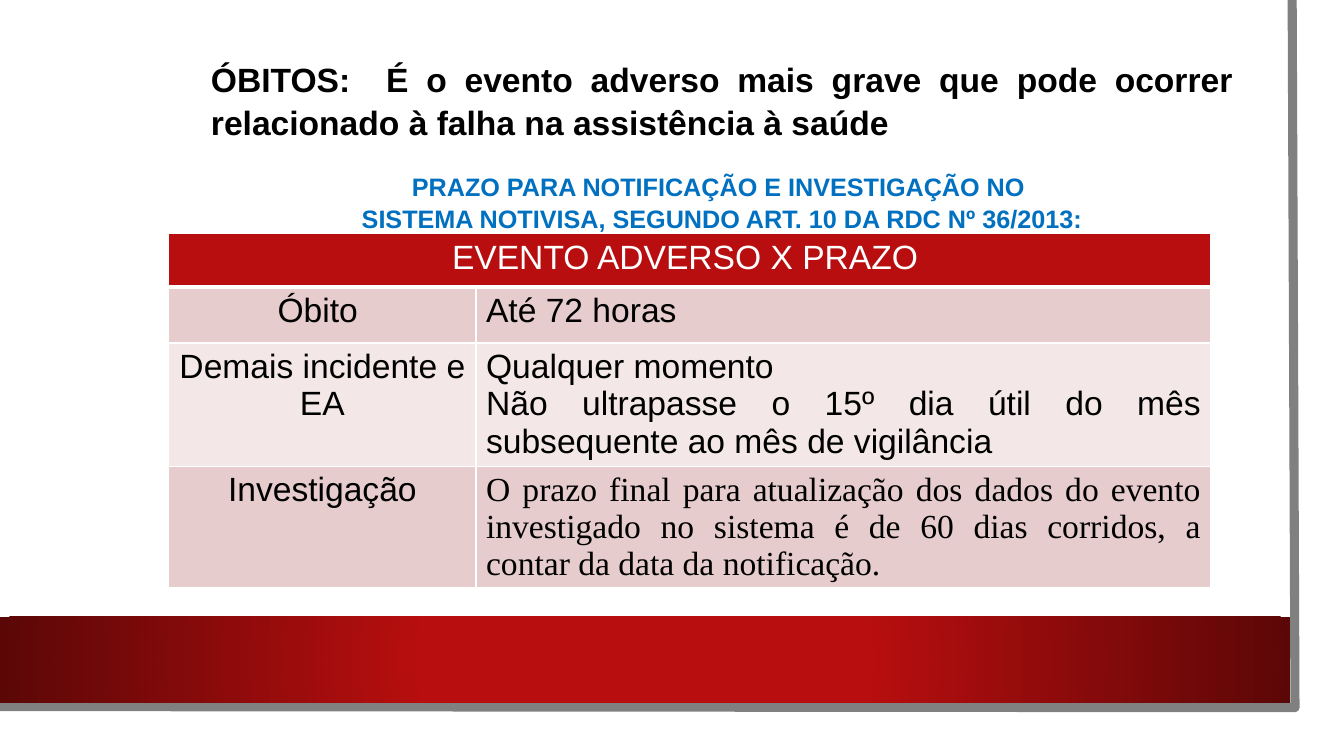
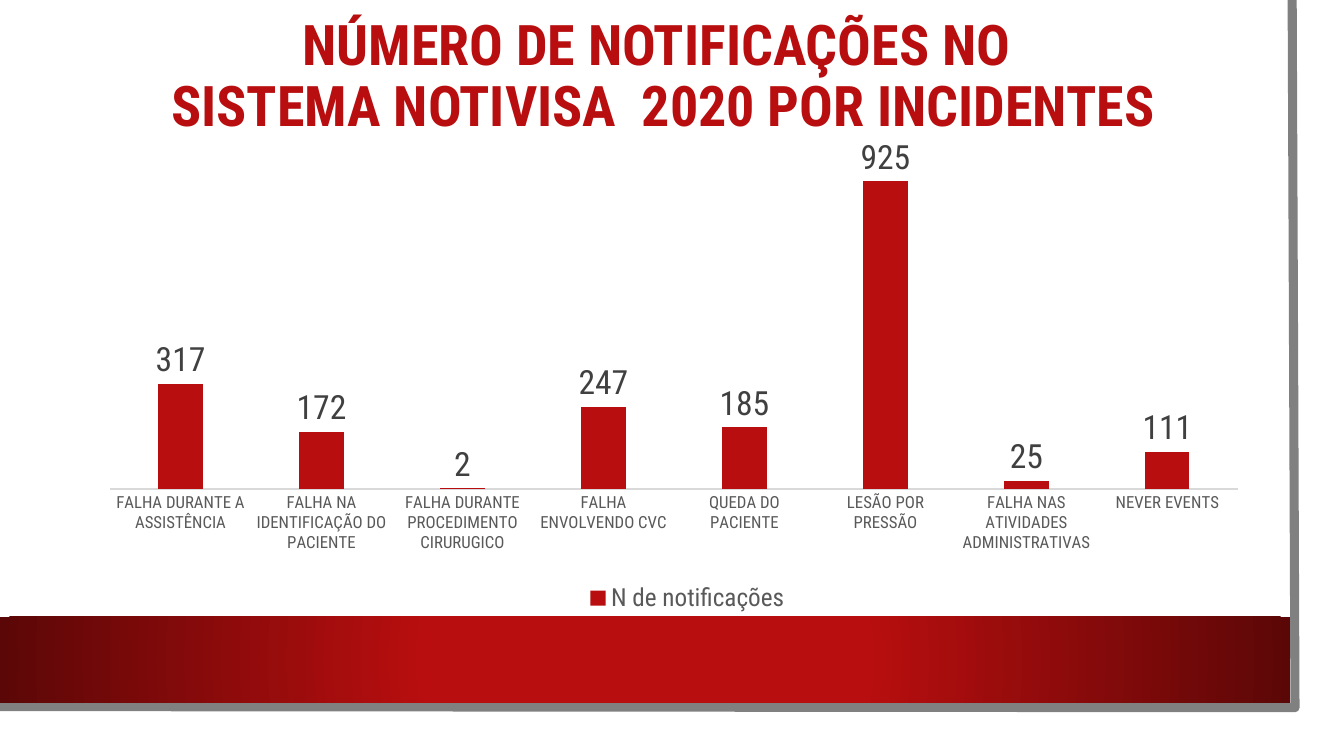
from dataclasses import dataclass

from pptx import Presentation
from pptx.chart.data import CategoryChartData
from pptx.dml.color import RGBColor
from pptx.enum.chart import XL_CHART_TYPE as ChartType
from pptx.enum.chart import XL_LABEL_POSITION as LabelPosition
from pptx.enum.chart import XL_LEGEND_POSITION as LegendPosition
from pptx.enum.chart import XL_TICK_MARK as TickMark
from pptx.enum.shapes import MSO_SHAPE as Preset
from pptx.enum.text import MSO_ANCHOR as Anchor
from pptx.enum.text import MSO_AUTO_SIZE as AutoSize
from pptx.enum.text import PP_ALIGN as Align
from pptx.oxml import parse_xml
from pptx.oxml.ns import nsdecls
from pptx.util import Pt

COLORS = {
    "white": "FFFFFF", "black": "000000", "red": "B80E0F", "dark red": "5C0707",
    "frame": "808080", "blue": "0070C0", "rose": "E6CCCC", "pale rose": "F3E7E7",
    "label": "404040", "axis text": "595959", "axis line": "D9D9D9",
}
SANS, SERIF, CONDENSED = "Arial", "Times New Roman", "Roboto Condensed"
TITLE_LAYOUT, BODY_LAYOUT = 5, 1


@dataclass(frozen=True)
class Style:
    size: float
    color: str = "black"
    name: str = SANS
    bold: bool = False


@dataclass(frozen=True)
class Line:
    text: str
    style: Style
    align: Align = Align.CENTER
    before: float = 0
    spacing: float = 1.0


@dataclass(frozen=True)
class TableRow:
    height: float
    fill: str
    cells: tuple[tuple[Line, ...], ...]


def rgb(color: str) -> RGBColor:
    return RGBColor.from_string(COLORS[color])


def apply_style(font, style: Style) -> None:
    font.name, font.size, font.bold = style.name, Pt(style.size), style.bold
    font.color.rgb = rgb(style.color)


def write_lines(frame, lines: tuple[Line, ...], plain: bool = False) -> None:
    """Write one paragraph per line; plain removes the inherited bullet."""
    for index, line in enumerate(lines):
        para = frame.paragraphs[0] if index == 0 else frame.add_paragraph()
        if plain:
            properties = para._p.get_or_add_pPr()
            properties.set("marL", "0")
            properties.set("indent", "0")
            properties.append(parse_xml(f"<a:buNone {nsdecls('a')}/>"))
        para.alignment = line.align
        para.space_before = Pt(line.before)
        para.line_spacing = line.spacing
        for part_index, part in enumerate(line.text.split("\n")):
            if part_index:
                para.add_line_break()
            span = para.add_run()
            span.text = part
            apply_style(span.font, line.style)


def place(box, left: float, top: float, width: float, height: float) -> None:
    box.left, box.top, box.width, box.height = Pt(left), Pt(top), Pt(width), Pt(height)


def prepare_frame(box, anchor: Anchor):
    frame = box.text_frame
    frame.word_wrap = True
    frame.auto_size = AutoSize.NONE
    frame.vertical_anchor = anchor
    return frame


# Shared frame and band, kept on the slide master
def add_master_frame(deck, page) -> None:
    sheet = page.shapes.add_shape(Preset.RECTANGLE, 0, 0, Pt(943), Pt(523.5))
    sheet.fill.solid()
    sheet.fill.fore_color.rgb = rgb("white")
    sheet.line.fill.background()

    builder = page.shapes.build_freeform(Pt(923), 0)
    builder.add_line_segments([(Pt(925), Pt(505.5)), (Pt(-2), Pt(504.7))], close=False)
    edge = builder.convert_to_shape()
    edge.fill.background()
    edge.line.color.rgb = rgb("frame")
    edge.line.width = Pt(6.5)

    band = page.shapes.add_shape(Preset.RECTANGLE, 0, Pt(440.7), Pt(921.5), Pt(61.3))
    band.line.fill.background()
    band.fill.gradient()
    stops = ((0.34, "red"), (1.0, "dark red"))
    for stop, (position, color) in zip(band.fill.gradient_stops, stops):
        stop.position = position
        stop.color.rgb = rgb(color)
    linear = band.element.xpath("./p:spPr/a:gradFill/a:lin")[0]
    linear.getparent().replace(linear, parse_xml(
        f'<a:path {nsdecls("a")} path="circle">'
        '<a:fillToRect l="50000" t="50000" r="50000" b="50000"/></a:path>'))

    tree = deck.slide_master.shapes.element
    for index, shape in enumerate((sheet, edge, band)):
        shape.shadow.inherit = False
        shape.element.xpath("./p:nvSpPr/p:cNvPr")[0].set("id", str(100 + index))
        tree.insert(2 + index, shape.element)


# Deadline slide
CELL = Style(24)
HEADING = Style(24, bold=True)
NOTICE = Style(18, "blue", bold=True)
DEADLINE_TEXT = (
    Line("ÓBITOS:  É o evento adverso mais grave que pode ocorrer relacionado à "
         "falha na assistência à saúde", HEADING, Align.JUSTIFY, spacing=1.07),
    Line("PRAZO PARA NOTIFICAÇÃO E INVESTIGAÇÃO NO ", NOTICE, before=19, spacing=1.07),
    Line("SISTEMA NOTIVISA, SEGUNDO ART. 10 DA RDC Nº 36/2013:", NOTICE, spacing=1.07),
)
COLUMN_WIDTHS = (219.5, 525)
DEADLINE_ROWS = (
    TableRow(38, "red", ((Line("EVENTO ADVERSO X PRAZO ", Style(24, "white")),),)),
    TableRow(40, "rose", (
        (Line("Óbito ", CELL),),
        (Line("Até 72 horas ", CELL, Align.JUSTIFY),))),
    TableRow(88, "pale rose", (
        (Line("Demais incidente e EA", CELL),),
        (Line("Qualquer momento", CELL, Align.JUSTIFY),
         Line("Não ultrapasse o 15º dia útil do mês subsequente ao mês de vigilância",
              CELL, Align.JUSTIFY)))),
    TableRow(86.5, "rose", (
        (Line("Investigação", CELL),),
        (Line("O prazo final para atualização dos dados do evento investigado no "
              "sistema é de 60 dias corridos, a contar da data da notificação.",
              Style(24, name=SERIF), Align.JUSTIFY),))),
)


def add_borders(cell, header: bool) -> None:
    properties = cell._tc.get_or_add_tcPr()
    for index, side in enumerate(("lnL", "lnR", "lnT", "lnB")):
        width = Pt(3 if header and side == "lnB" else 1)
        properties.insert(index, parse_xml(
            f'<a:{side} {nsdecls("a")} w="{width}"><a:solidFill>'
            f'<a:srgbClr val="{COLORS["white"]}"/></a:solidFill></a:{side}>'))


def add_deadline_table(page) -> None:
    height = sum(row.height for row in DEADLINE_ROWS)
    table = page.shapes.add_table(
        len(DEADLINE_ROWS), len(COLUMN_WIDTHS), Pt(120.5), Pt(167),
        Pt(sum(COLUMN_WIDTHS)), Pt(height)).table
    for column, width in zip(table.columns, COLUMN_WIDTHS):
        column.width = Pt(width)
    table.cell(0, 0).merge(table.cell(0, 1))
    for row_index, row in enumerate(DEADLINE_ROWS):
        table.rows[row_index].height = Pt(row.height)
        for column_index in range(len(COLUMN_WIDTHS)):
            cell = table.cell(row_index, column_index)
            cell.fill.solid()
            cell.fill.fore_color.rgb = rgb(row.fill)
            add_borders(cell, row_index == 0)
            if column_index < len(row.cells):
                write_lines(cell.text_frame, row.cells[column_index])


def fill_deadline_page(page) -> None:
    title = page.shapes.title
    title.element.getparent().remove(title.element)
    body = page.placeholders[1]
    place(body, 143.5, 36.4, 744.5, 128)
    write_lines(prepare_frame(body, Anchor.TOP), DEADLINE_TEXT, plain=True)
    add_deadline_table(page)


# Incident chart slide
CHART_TITLE = Line("NÚMERO DE NOTIFICAÇÕES NO \nSISTEMA NOTIVISA  2020 POR INCIDENTES",
                   Style(40, "red", CONDENSED, True), spacing=0.9)
INCIDENTS = {
    "FALHA DURANTE A ASSISTÊNCIA": 317,
    "FALHA NA IDENTIFICAÇÃO DO PACIENTE": 172,
    "FALHA DURANTE PROCEDIMENTO CIRURUGICO": 2,
    "FALHA ENVOLVENDO CVC": 247,
    "QUEDA DO PACIENTE": 185,
    "LESÃO POR PRESSÃO": 925,
    "FALHA NAS ATIVIDADES ADMINISTRATIVAS": 25,
    "NEVER EVENTS": 111,
}
PLOT_AREA = {"x": 0.002, "y": 0.029, "w": 0.973, "h": 0.7}


def set_plot_area(chart) -> None:
    area = chart.element.xpath("./c:chart/c:plotArea")[0]
    for layout in area.xpath("./c:layout"):
        area.remove(layout)
    sizes = "".join(f'<c:{key} val="{value}"/>' for key, value in PLOT_AREA.items())
    area.insert(0, parse_xml(
        f'<c:layout {nsdecls("c")}><c:manualLayout><c:layoutTarget val="inner"/>'
        f'<c:xMode val="edge"/><c:yMode val="edge"/>{sizes}'
        '</c:manualLayout></c:layout>'))


def add_incident_chart(page) -> None:
    data = CategoryChartData()
    data.categories = list(INCIDENTS)
    data.add_series("N de notificações", list(INCIDENTS.values()))
    chart = page.shapes.add_chart(ChartType.COLUMN_CLUSTERED, Pt(77), Pt(98.6),
                                  Pt(828), Pt(342.7), data).chart
    apply_style(chart.font, Style(10, name=CONDENSED))
    chart.has_title = False
    chart.has_legend = True
    chart.legend.position = LegendPosition.BOTTOM
    chart.legend.include_in_layout = False
    apply_style(chart.legend.font, Style(18, "axis text", CONDENSED))

    categories = chart.category_axis
    categories.major_tick_mark = categories.minor_tick_mark = TickMark.NONE
    categories.format.line.color.rgb = rgb("axis line")
    categories.format.line.width = Pt(0.75)
    apply_style(categories.tick_labels.font, Style(12, "axis text", CONDENSED))
    values = chart.value_axis
    values.minimum_scale, values.maximum_scale = 0, 1000
    values.has_major_gridlines = False
    values.visible = False

    plot = chart.plots[0]
    plot.vary_by_categories = False
    plot.gap_width, plot.overlap = 219, -27
    series = plot.series[0]
    series.invert_if_negative = False
    series.format.fill.solid()
    series.format.fill.fore_color.rgb = rgb("red")
    labels = series.data_labels
    labels.show_value = True
    labels.position = LabelPosition.OUTSIDE_END
    apply_style(labels.font, Style(24, "label", CONDENSED))
    set_plot_area(chart)


def fill_incident_page(page) -> None:
    title = page.shapes.title
    place(title, 42, 10, 863, 91)
    write_lines(prepare_frame(title, Anchor.MIDDLE), (CHART_TITLE,))
    add_incident_chart(page)


def main() -> None:
    deck = Presentation()
    deck.slide_width, deck.slide_height = Pt(960), Pt(540)
    deadline_page = deck.slides.add_slide(deck.slide_layouts[BODY_LAYOUT])
    add_master_frame(deck, deadline_page)
    fill_deadline_page(deadline_page)
    fill_incident_page(deck.slides.add_slide(deck.slide_layouts[TITLE_LAYOUT]))
    deck.save("out.pptx")


if __name__ == "__main__":
    main()
